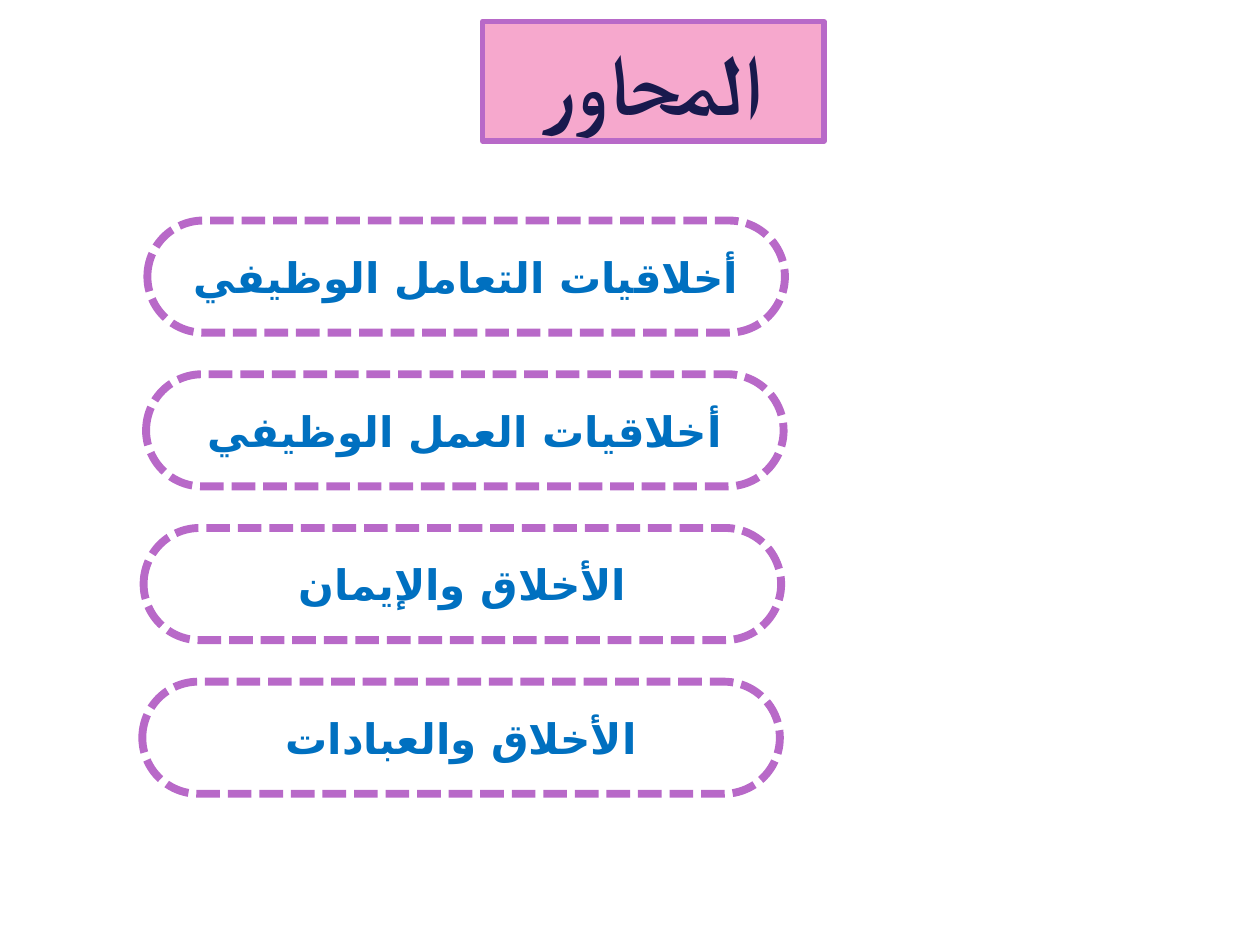
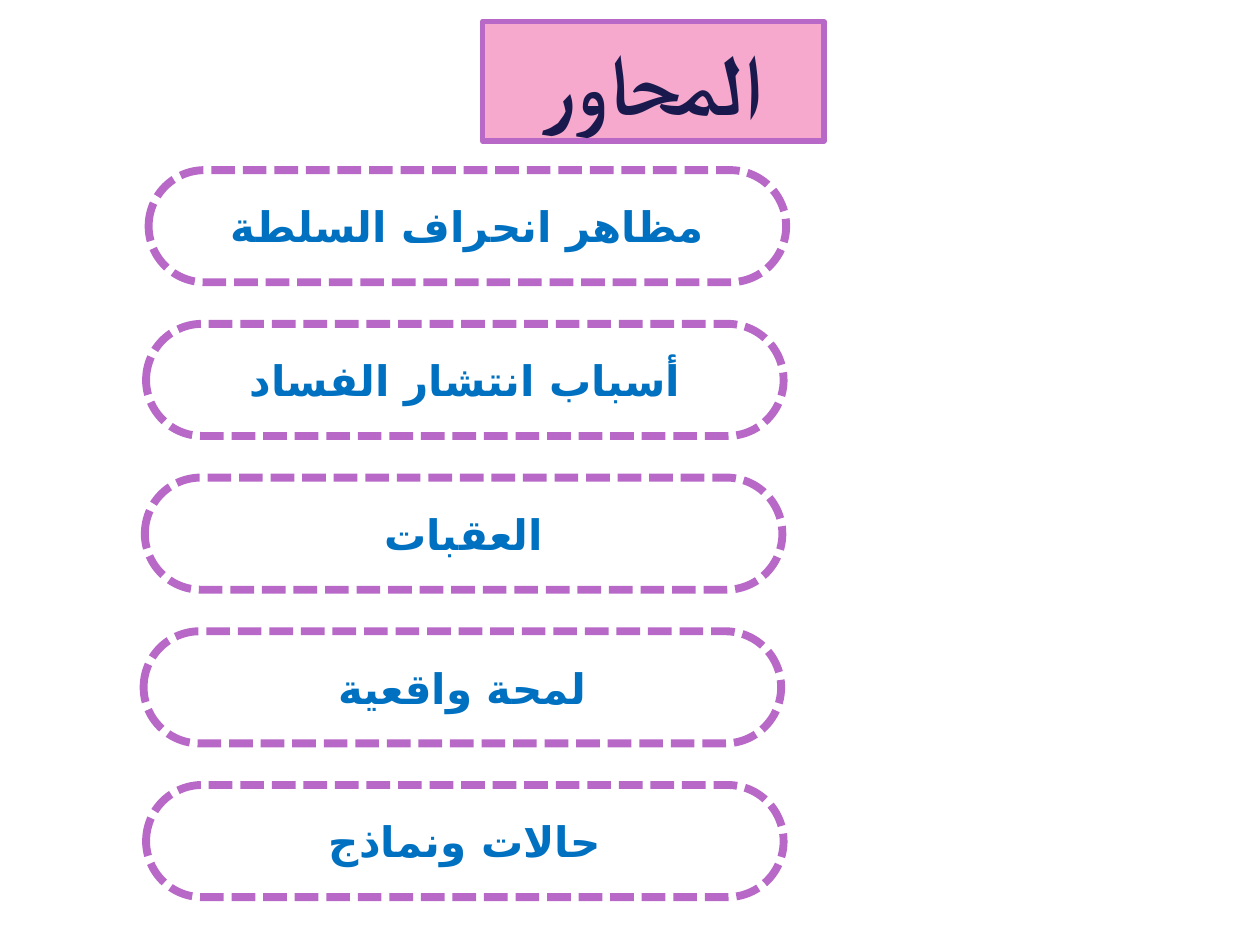
"""Build two slides listing the topics of a talk on work ethics."""
from lxml.etree import SubElement
from pptx import Presentation
from pptx.dml.color import RGBColor
from pptx.enum.dml import MSO_LINE
from pptx.enum.shapes import MSO_SHAPE as SHAPE
from pptx.enum.text import MSO_ANCHOR as ANCHOR, PP_ALIGN as ALIGN
from pptx.oxml.ns import qn
from pptx.util import Pt

PX = 9144
COLORS = {"white": "FFFFFF", "purple": "B869C8", "pink": "F6A8CD",
          "blue": "0070C0", "navy": "19194D"}
TITLE = "المحاور"
PILL_W, PILL_H, PILL_STEP = 506, 89, 122
SLIDES = [
    (175, [(117, "أخلاقيات التعامل الوظيفي"),
           (116, "أخلاقيات العمل الوظيفي"),
           (114, "الأخلاق والإيمان"),
           (113, "الأخلاق والعبادات")]),
    (135, [(118, "مظاهر انحراف السلطة"),
           (116, "أسباب انتشار الفساد"),
           (115, "العقبات"),
           (114, "لمحة واقعية"),
           (116, "حالات ونماذج")]),
]


def rgb(name):
    return RGBColor.from_string(COLORS[name])


def add_box(s, kind, box, text, fill, line_pt, font, size, color):
    sp = s.shapes.add_shape(kind, *[v * PX for v in box])
    sp.shadow.inherit = False
    sp.fill.solid()
    sp.fill.fore_color.rgb = rgb(fill)
    sp.line.color.rgb = rgb("purple")
    sp.line.width = Pt(line_pt)
    tf = sp.text_frame
    tf.vertical_anchor = ANCHOR.MIDDLE
    tf.text = text
    p = tf.paragraphs[0]
    p.alignment = ALIGN.CENTER
    r = p.runs[0]
    r.font.name = font
    r.font.size = Pt(size)
    r.font.bold = True
    r.font.color.rgb = rgb(color)
    SubElement(r.font._element, qn("a:cs")).set("typeface", font)
    return sp


prs = Presentation()
prs.slide_width, prs.slide_height = 1000 * PX, 750 * PX

for top, topics in SLIDES:
    s = prs.slides.add_slide(prs.slide_layouts[6])
    add_box(s, SHAPE.RECTANGLE, (383, 17, 271, 95), TITLE,
            "pink", 3, "Arial", 49, "navy")
    for i, (left, topic) in enumerate(topics):
        pill = add_box(s, SHAPE.ROUNDED_RECTANGLE,
                       (left, top + i * PILL_STEP, PILL_W, PILL_H), topic,
                       "white", 4.5, "DejaVu Sans", 24, "blue")
        pill.adjustments[0] = 0.5
        pill.line.dash_style = MSO_LINE.SQUARE_DOT
        tf = pill.text_frame
        tf.word_wrap = False
        tf.paragraphs[0]._p.get_or_add_pPr().set("rtl", "1")

prs.save("out.pptx")
